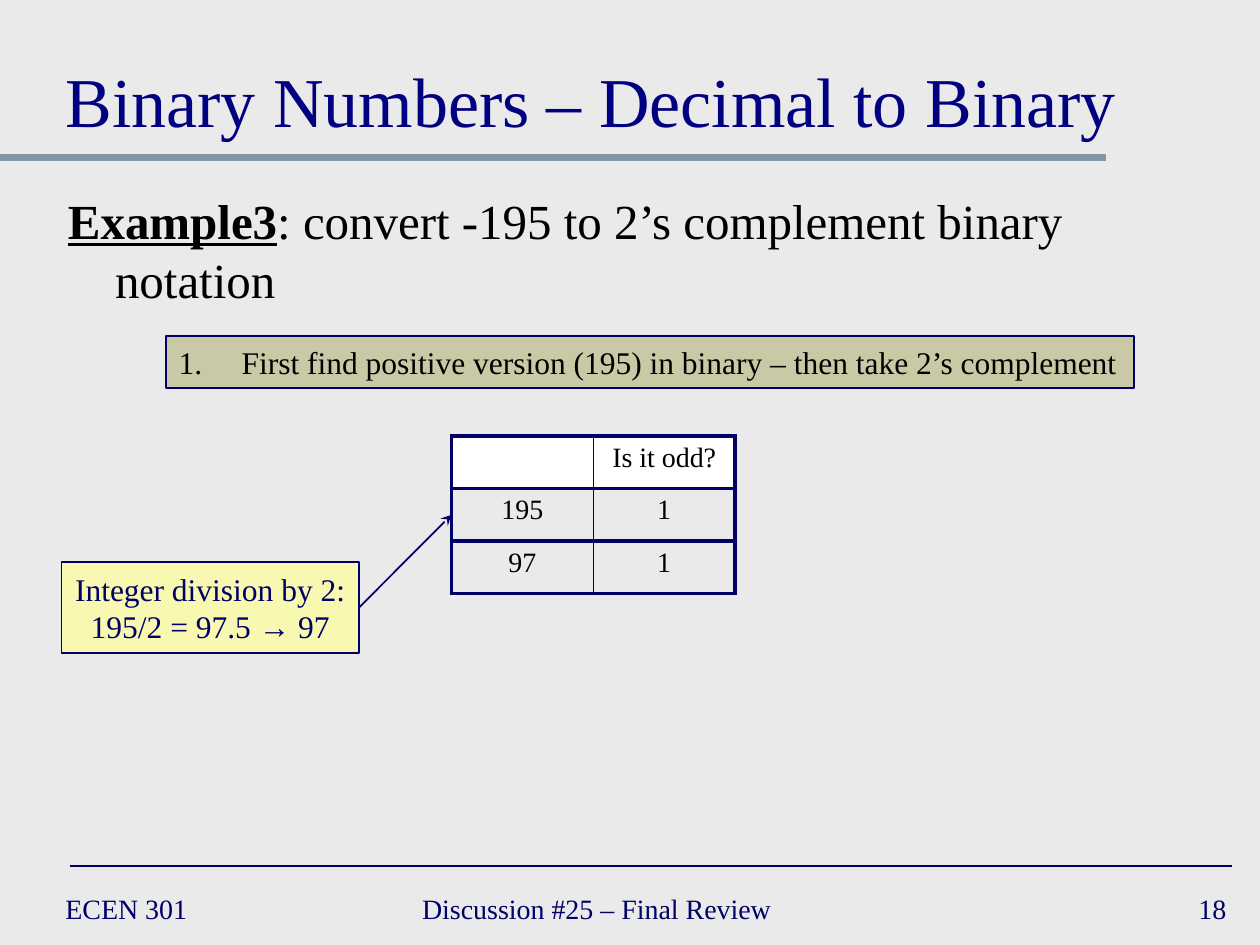
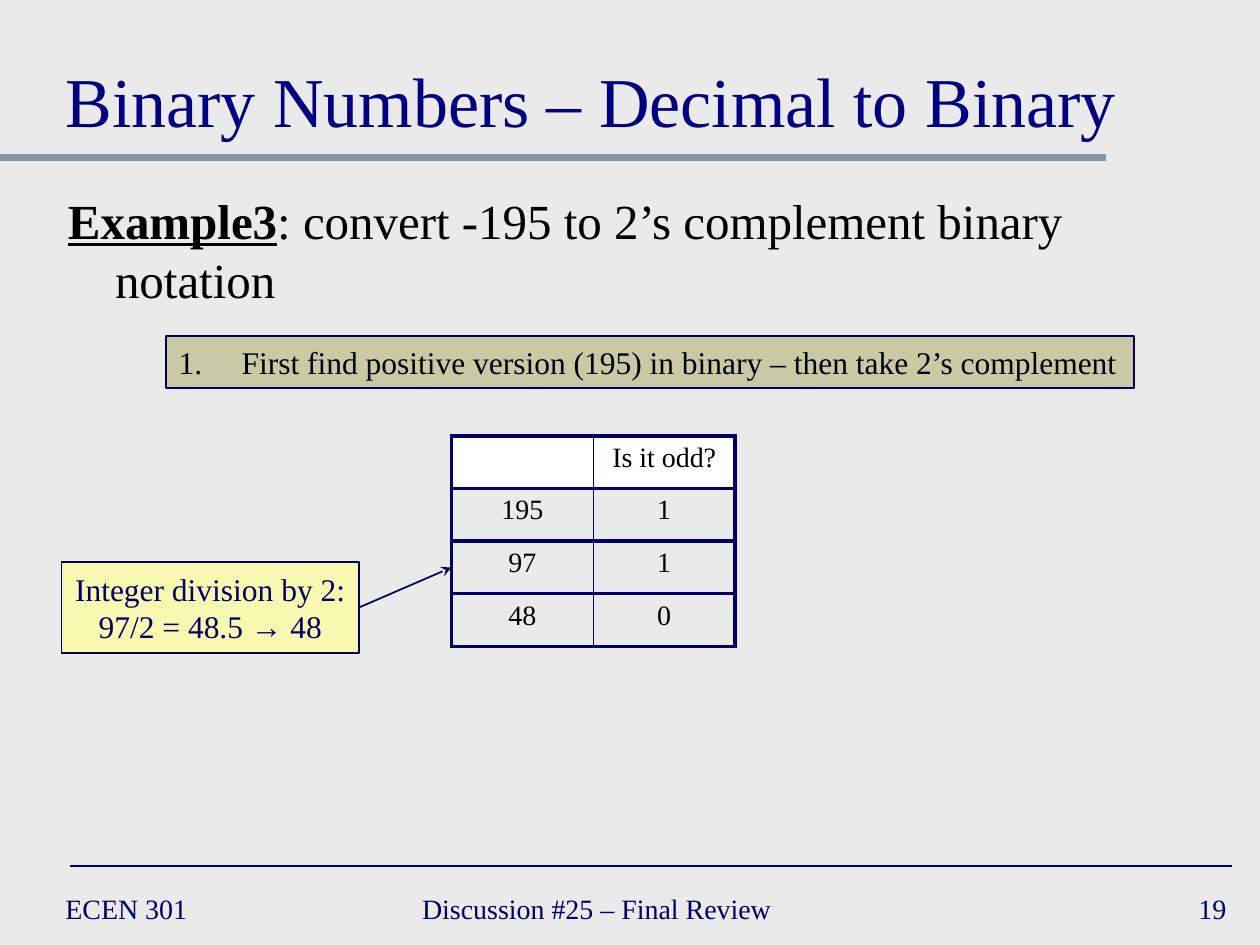
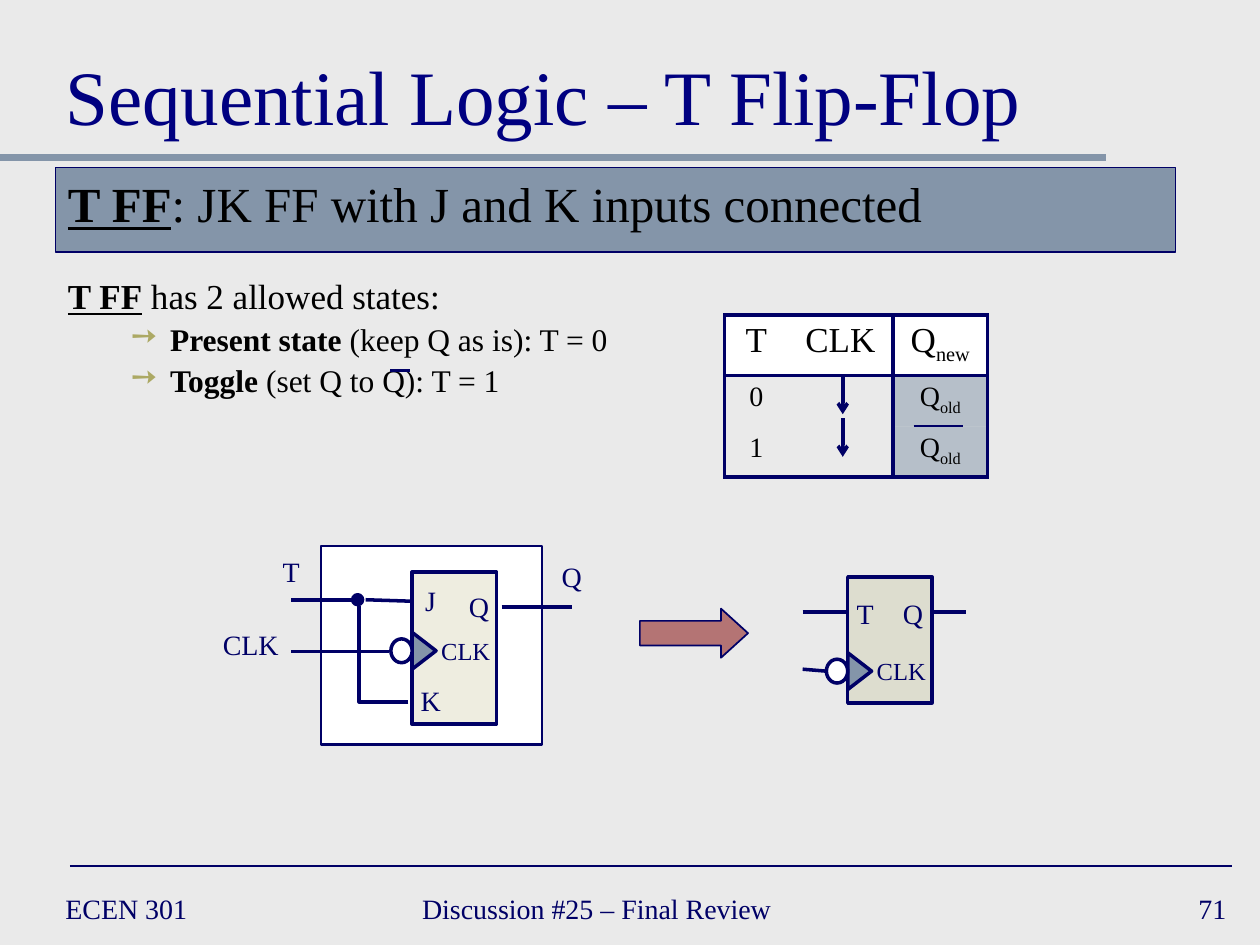
from lxml import etree
from pptx import Presentation
from pptx.dml.color import RGBColor
from pptx.enum.shapes import MSO_CONNECTOR, MSO_SHAPE
from pptx.enum.text import MSO_ANCHOR, PP_ALIGN
from pptx.oxml.ns import qn
from pptx.util import Cm, Pt

STRAIGHT, ELBOW = MSO_CONNECTOR.STRAIGHT, MSO_CONNECTOR.ELBOW
RECT, OVAL = MSO_SHAPE.RECTANGLE, MSO_SHAPE.OVAL
TRIANGLE, RIGHT_ARROW = MSO_SHAPE.ISOSCELES_TRIANGLE, MSO_SHAPE.RIGHT_ARROW
TOP, MIDDLE, BOTTOM = MSO_ANCHOR.TOP, MSO_ANCHOR.MIDDLE, MSO_ANCHOR.BOTTOM
LEFT, CENTER, RIGHT = PP_ALIGN.LEFT, PP_ALIGN.CENTER, PP_ALIGN.RIGHT
RIGHT_SIDE = 3

COLORS = {
    "paper": "EAEAEA", "navy": "000066", "title": "000080", "slate": "8495A9",
    "olive": "ACA964", "chip": "ABA964", "yellow": "FFFF99", "maroon": "800000",
    "white": "FFFFFF", "black": "000000",
}
FONT = "Times New Roman"
TERM = {"bold": True, "underline": True}
BOLD = {"bold": True}
SUB = {"baseline": "-25000"}
HEAVY, THIN = 2.25, 1
WIRE = 2
ROW_HEIGHT = 1.06


def color(key):
    return RGBColor.from_string(COLORS[key])


def add_child(parent, tag, **attributes):
    child = etree.SubElement(parent, qn(tag))
    for key, value in attributes.items():
        child.set(key, value)
    return child


def paint(fill, properties, key, opacity=100):
    if key is None:
        fill.background()
        return
    fill.solid()
    fill.fore_color.rgb = color(key)
    if opacity < 100:
        tint = properties.find(qn("a:solidFill"))[0]
        add_child(tint, "a:alpha", val=str(opacity * 1000))


def para(*runs, hang=None, bullet=None, **layout):
    return {"runs": runs, "hang": hang, "bullet": bullet, "layout": layout}


def set_bullet(paragraph, hang, bullet):
    properties = paragraph._p.get_or_add_pPr()
    if hang:
        margin, indent = hang
        properties.set("marL", str(Cm(margin)))
        properties.set("indent", str(Cm(indent)))
    if bullet == "number":
        add_child(properties, "a:buAutoNum", type="arabicPeriod")
    elif bullet:
        tint = add_child(properties, "a:buClr")
        add_child(tint, "a:srgbClr", val=COLORS["olive"])
        add_child(properties, "a:buChar", char=bullet)


def write(frame, paragraphs, size, ink="black", align=LEFT):
    for index, content in enumerate(paragraphs):
        paragraph = frame.add_paragraph() if index else frame.paragraphs[0]
        set_bullet(paragraph, content["hang"], content["bullet"])
        for key, value in {"alignment": align, **content["layout"]}.items():
            setattr(paragraph, key, value)
        for text, changes in content["runs"]:
            run = paragraph.add_run()
            run.text = text
            run.font.color.rgb = color(ink)
            look = {"name": FONT, "size": Pt(size), **changes}
            baseline = look.pop("baseline", None)
            for key, value in look.items():
                setattr(run.font, key, value)
            if baseline:
                run._r.get_or_add_rPr().set("baseline", baseline)


def add_text(slide, box, paragraphs, size, ink="black", align=LEFT, anchor=TOP, wrap=True):
    frame = slide.shapes.add_textbox(*map(Cm, box)).text_frame
    frame.word_wrap = wrap
    frame.vertical_anchor = anchor
    write(frame, paragraphs, size, ink, align)


def add_block(slide, kind, box, fill, width, opacity=100):
    block = slide.shapes.add_shape(kind, *map(Cm, box))
    block.shadow.inherit = False
    paint(block.fill, block.element.spPr, fill, opacity)
    block.line.color.rgb = color("navy")
    block.line.width = Pt(width)
    return block


def fill_block(block, paragraphs, size, ink="black", align=LEFT, anchor=MIDDLE, wrap=False):
    block.text_frame.word_wrap = wrap
    block.text_frame.vertical_anchor = anchor
    write(block.text_frame, paragraphs, size, ink, align)


def add_line(slide, x1, y1, x2, y2, width, ink="navy", tip=None, route=STRAIGHT):
    line = slide.shapes.add_connector(route, Cm(x1), Cm(y1), Cm(x2), Cm(y2))
    line.line.color.rgb = color(ink)
    line.line.width = Pt(width)
    if tip:
        add_child(line.line._get_or_add_ln(), "a:tailEnd", type=tip)
    add_child(line._element.spPr, "a:effectLst")
    return line


def set_borders(cell, widths):
    properties = cell._tc.get_or_add_tcPr()
    for side, width in zip("LRTB", widths):
        border = add_child(properties, f"a:ln{side}", w=str(Pt(width)))
        if width:
            add_child(add_child(border, "a:solidFill"), "a:srgbClr", val=COLORS["navy"])
        else:
            add_child(border, "a:noFill")


def add_grid(slide, origin, columns, heights, rows, verticals, horizontals, sizes, tinted=None):
    total = (sum(columns), sum(heights))
    table = slide.shapes.add_table(len(rows), len(columns), *map(Cm, origin + total)).table
    table.first_row = table.horz_banding = False
    for column, width in zip(table.columns, columns):
        column.width = Cm(width)
    for r, values in enumerate(rows):
        table.rows[r].height = Cm(heights[r])
        for c, value in enumerate(values):
            cell = table.cell(r, c)
            set_borders(cell, verticals[c:c + 2] + horizontals[r:r + 2])
            if r == 0:
                paint(cell.fill, cell._tc.tcPr, "white")
            elif c == tinted:
                paint(cell.fill, cell._tc.tcPr, "slate", 50)
            else:
                paint(cell.fill, cell._tc.tcPr, None)
            if value:
                text, _, subscript = value.partition("_")
                runs = [(text, {})] + ([(subscript, SUB)] if subscript else [])
                write(cell.text_frame, [para(*runs)], sizes[min(r, 1)], align=CENTER)


def add_frame(prs, title, number, title_size):
    slide = prs.slides.add_slide(prs.slide_layouts[6])
    add_line(slide, 0, 3.18, 22.3, 3.18, 4, "slate")
    add_line(slide, 1.41, 17.46, 24.84, 17.46, 1)
    footers = [
        (1.07, 5.51, "ECEN 301", LEFT),
        (8.26, 9.73, "Discussion #25 – Final Review", LEFT),
        (19.69, 5.28, number, RIGHT),
    ]
    for x, width, text, align in footers:
        add_text(slide, (x, 17.78, width, 1.07), [para((text, {}))], 16, "navy", align, MIDDLE)
    add_text(slide, (1.07, 0.43, 23.29, 2.54), [para((title, {}))], title_size, "title", anchor=BOTTOM)
    return slide


def add_division(slide, box, calculation, target):
    callout = add_block(slide, RECT, box, "yellow", 1, 70)
    lines = [para((text, {})) for text in ("Integer division by 2:", calculation)]
    fill_block(callout, lines, 18, "navy", CENTER)
    x, y, width, height = box
    arrow = add_line(slide, x + width, y + height / 2, *target, 1, tip="stealth")
    arrow.begin_connect(callout, RIGHT_SIDE)


def conversion_slide(prs, number, steps, calculation):
    slide = add_frame(prs, "Binary Numbers – Decimal to Binary", number, 40)
    example = para(("Example3", TERM), (": convert -195 to 2’s complement binary notation", {}),
                   hang=(0.95, -0.95))
    add_text(slide, (1.12, 3.71, 23.22, 2.44), [example], 28)
    step_one = add_block(slide, RECT, (3.35, 6.78, 19.51, 1.04), "olive", 1, 50)
    instruction = "First find positive version (195) in binary – then take 2’s complement"
    fill_block(step_one, [para((instruction, {}), hang=(1.27, -1.27), bullet="number")], 18)
    rows = [("", "Is it odd?")] + [(str(n), str(n % 2)) for n in steps]
    left, top = 9.1, 8.79
    add_grid(slide, (left, top), (2.86, 2.86), [ROW_HEIGHT] * len(rows), rows,
             [HEAVY, THIN, HEAVY], [HEAVY] * (len(rows) + 1), (16, 16))
    divided_row = len(steps) - 1
    add_division(slide, (1.24, 11.33, 6, 1.83), calculation,
                 (left, top + ROW_HEIGHT * (divided_row + 0.5)))


def add_labels(slide, x, y, labels):
    for text, dx, dy, width, size in labels:
        add_text(slide, (x + dx, y + dy, width, size * 0.06), [para((text, {}))],
                 size, "navy", CENTER, wrap=False)


def add_wires(slide, x, y, wires):
    for x1, y1, x2, y2 in wires:
        add_line(slide, x + x1, y + y1, x + x2, y + y2, WIRE)


def add_chip(slide, box, clock, pins):
    x, y = box[:2]
    add_block(slide, RECT, box, "chip", WIRE, 20)
    edge = add_block(slide, TRIANGLE, (x - 0.13, y + clock - 0.24, 0.74, 0.48), "slate", WIRE)
    edge.rotation = 90
    add_block(slide, OVAL, (x - 0.43, y + clock - 0.24, 0.43, 0.48), "white", WIRE)
    add_labels(slide, x, y, pins + [("CLK", 0.33, clock - 0.43, 1.5, 14)])


def add_jk_circuit(slide, box):
    x, y = box[:2]
    add_block(slide, RECT, box, "white", 1.25)
    add_labels(slide, x, y, [("CLK", -2.24, 1.52, 1.63, 16), ("T", -1.04, 0.05, 0.86, 16),
                             ("Q", 4.59, 0.15, 0.91, 16)])
    add_chip(slide, (x + 1.83, y + 0.53, 1.7, 3.07), 1.59,
             [("J", 0, 0.1, 0.74, 16), ("Q", 0.89, 0.23, 0.91, 16), ("K", -0.08, 2.13, 0.91, 16)])
    add_block(slide, OVAL, (x + 0.63, y + 0.99, 0.2, 0.2), "navy", WIRE)
    add_wires(slide, x, y, [(-0.61, 1.09, 0.61, 1.09), (0.89, 1.09, 1.83, 1.12),
                            (-0.61, 2.13, 1.37, 2.13), (3.63, 1.24, 5.05, 1.24)])
    branch = add_line(slide, x + 0.76, y + 1.22, x + 1.75, y + 3.15, WIRE, route=ELBOW)
    shape_properties = branch._element.spPr
    shape_properties.find(qn("a:prstGeom")).set("prst", "bentConnector2")
    shape_properties.find(qn("a:xfrm")).set("rot", "10800000")


def add_t_symbol(slide, box):
    x, y, width = box[:3]
    add_chip(slide, box, 1.9, [("T", -0.08, 0.28, 0.86, 16), ("Q", 0.86, 0.28, 0.91, 16)])
    add_wires(slide, x, y, [(-0.91, 0.71, 0, 0.71), (-0.91, 1.86, -0.43, 1.9),
                            (width, 0.71, width + 0.69, 0.71)])


def add_truth_table(slide, x, y):
    rows = [("T", "CLK", "Q_new"), ("0", "", "Q_old"), ("1", "", "Q_old")]
    add_grid(slide, (x, y), (1.27, 2.12, 1.91), (1.14, 0.97, 0.97), rows,
             [HEAVY, 0, HEAVY, HEAVY], [HEAVY, HEAVY, 0, HEAVY], (20, 16), tinted=2)
    for index in range(2):
        top = y + 1.22 + 0.86 * index
        add_line(slide, x + 2.38, top, x + 2.38, top + 0.78, WIRE, tip="arrow")
    add_line(slide, x + 3.81, y + 2.23, x + 4.8, y + 2.23, 1.25)


def add_states(slide, box):
    x, y = box[:2]
    entry = {"hang": (2.06, -0.79), "bullet": "➙", "line_spacing": 0.9, "space_before": Pt(4)}
    small = {"size": Pt(18)}
    paragraphs = [para(("T FF", TERM), (" has 2 allowed states:", {}),
                       hang=(0.95, -0.95), line_spacing=0.9)]
    for state, rule in (("Present state", " (keep Q as is): T = 0"), ("Toggle", " (set Q to Q): T = 1")):
        paragraphs.append(para((state, {**BOLD, **small}), (rule, small), **entry))
    add_text(slide, box, paragraphs, 20)
    add_line(slide, x + 6.75, y + 1.96, x + 7.14, y + 1.96, 1.25)


def flip_flop_slide(prs):
    slide = add_frame(prs, "Sequential Logic – T Flip-Flop", "71", 44)
    definition = add_block(slide, RECT, (1.12, 3.38, 22.58, 1.7), "slate", 0.75)
    fill_block(definition, [para(("T FF", TERM), (": JK FF with J and K inputs connected", {}),
                                 hang=(0.95, -0.95))], 28, anchor=TOP, wrap=True)
    add_truth_table(slide, 14.61, 6.35)
    add_states(slide, (1.12, 5.51, 22.58, 3.15))
    add_jk_circuit(slide, (6.48, 11, 4.45, 4.01))
    becomes = add_block(slide, RIGHT_ARROW, (12.9, 12.27, 2.18, 0.99), "maroon", 1, 50)
    becomes.adjustments[1] = 0.55
    add_t_symbol(slide, (17.09, 11.63, 1.7, 2.54))


def main():
    prs = Presentation()
    prs.slide_width, prs.slide_height = Cm(25.4), Cm(19.05)
    background = prs.slide_master.background.fill
    background.solid()
    background.fore_color.rgb = color("paper")
    conversion_slide(prs, "18", (195, 97), "195/2 = 97.5 → 97")
    conversion_slide(prs, "19", (195, 97, 48), "97/2 = 48.5 → 48")
    flip_flop_slide(prs)
    prs.save("out.pptx")


if __name__ == "__main__":
    main()
